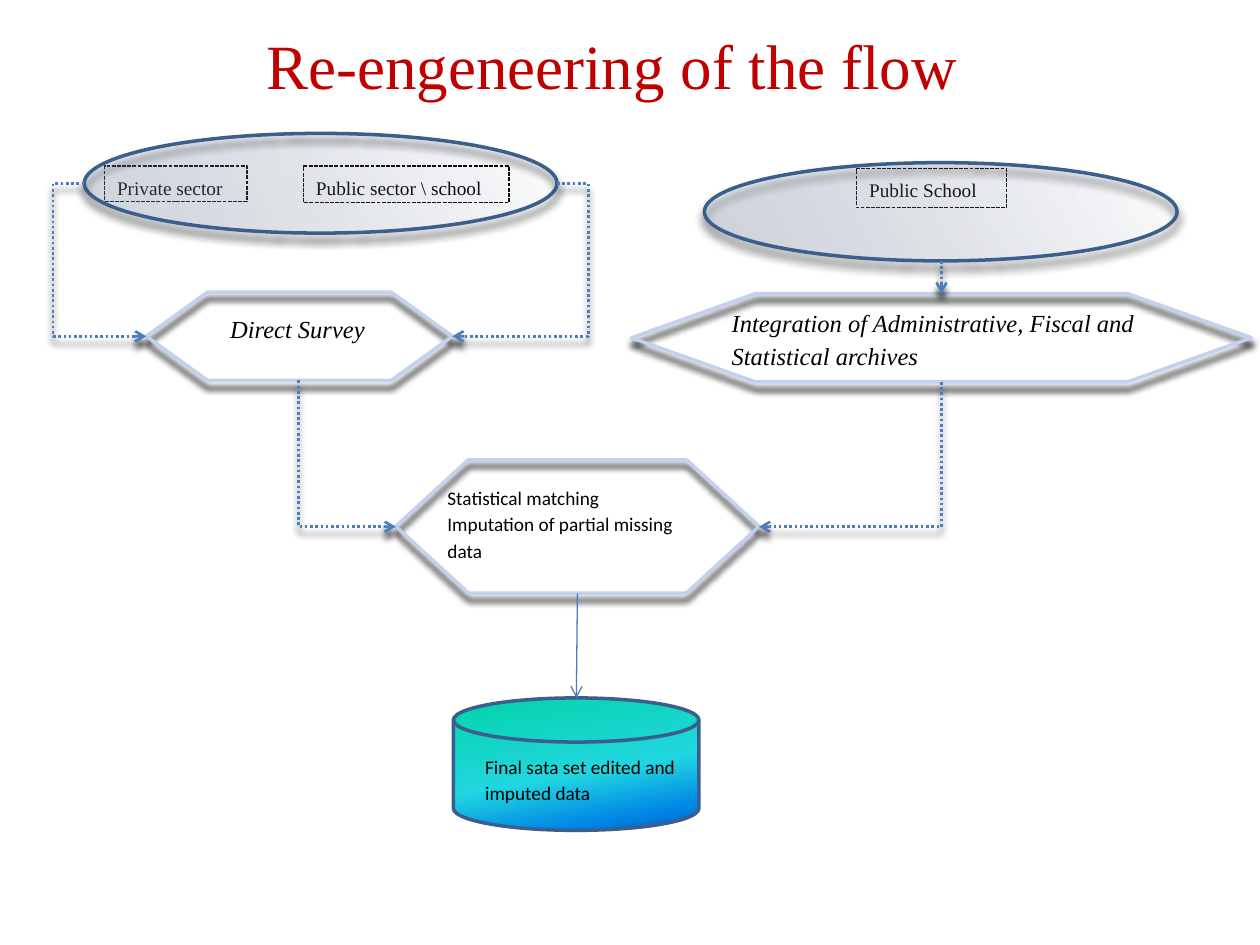
from lxml.etree import SubElement
from pptx import Presentation
from pptx.dml.color import RGBColor
from pptx.enum.dml import MSO_LINE as Dash
from pptx.enum.shapes import MSO_CONNECTOR as Link, MSO_SHAPE as Shape
from pptx.enum.text import MSO_ANCHOR as Anchor, PP_ALIGN as Align
from pptx.oxml.ns import qn
from pptx.util import Cm, Pt

SERIF, SANS = "Times New Roman", "Calibri"
NAVY, PALE, STEEL = "3A5F8C", "C2D1ED", "4B7EBC"
SKY_STOPS = [(0, "9AB5E4", 0), (100, PALE, 25), (100, "E1E8F5", 100)]
SKY_STOPS_SHORT = [(0, "9AB5E4", 0), (93, PALE, 25), (100, "E1E8F5", 100)]
SEA_STOPS = [(0, "03D4A8", 100), (56, "21D6E0", 100), (85, "0087E6", 100), (100, "005CBF", 100)]


def color(code):
    return RGBColor.from_string(code)


def add_color(parent, code, opacity):
    tint = SubElement(parent, qn("a:srgbClr"), val=code)
    SubElement(tint, qn("a:alpha"), val=str(opacity * 1000))


def set_shadow(item, opacity=0, blur=4):
    effects = SubElement(item._element.spPr, qn("a:effectLst"))
    if opacity:
        cast = SubElement(effects, qn("a:outerShdw"), blurRad=str(Pt(blur)), dist=str(Pt(4)),
                          dir="5400000", algn="ctr", rotWithShape="0")
        add_color(cast, "000000", opacity)


def set_line(item, code, width, dash=None):
    item.line.color.rgb = color(code)
    item.line.width = Pt(width)
    if dash:
        item.line.dash_style = dash


def set_gradient(shape, stops, angle):
    shape.fill.gradient()
    shape.fill.gradient_angle = 360 - angle
    stop_list = shape._element.spPr.find(".//" + qn("a:gsLst"))
    for old in list(stop_list):
        stop_list.remove(old)
    for position, code, opacity in stops:
        stop = SubElement(stop_list, qn("a:gs"), pos=str(position * 1000))
        add_color(stop, code, opacity)


def write(box, lines, size, font, code="000000", italic=None, spacing=1.15, after=0,
          align=Align.LEFT, anchor=Anchor.TOP, inset=True):
    frame = box.text_frame
    frame.word_wrap = True
    frame.vertical_anchor = anchor
    if not inset:
        frame.margin_left = frame.margin_right = frame.margin_top = frame.margin_bottom = 0
    frame.text = "\n".join(lines)
    for paragraph in frame.paragraphs:
        paragraph.alignment = align
        paragraph.line_spacing = spacing
        paragraph.space_after = Pt(after)
        paragraph.font.size = Pt(size)
        paragraph.font.name = font
        paragraph.font.italic = italic
        paragraph.font.color.rgb = color(code)


def add_label(slide, place, lines, size, font, **style):
    write(slide.shapes.add_textbox(*map(Cm, place)), lines, size, font, **style)


def add_source(slide, place, name, fill="FFFFFF"):
    source = slide.shapes.add_shape(Shape.RECTANGLE, *map(Cm, place))
    if fill:
        source.fill.solid()
        source.fill.fore_color.rgb = color(fill)
    else:
        source.fill.background()
    set_line(source, "000000", 0.75, Dash.SQUARE_DOT)
    set_shadow(source)
    write(source, [name], 11, SERIF, after=10)


def add_store(slide, kind, place, stops, angle, shadow=(0,)):
    store = slide.shapes.add_shape(kind, *map(Cm, place))
    set_gradient(store, stops, angle)
    set_line(store, NAVY, 2)
    set_shadow(store, *shadow)


def add_step(slide, place):
    step = slide.shapes.add_shape(Shape.FLOWCHART_PREPARATION, *map(Cm, place))
    step.fill.background()
    set_line(step, PALE, 2)
    set_shadow(step, 93)
    return step


def add_arrow(slide, kind, start, end, shadow=0, width=1.5, dash=Dash.ROUND_DOT):
    arrow = slide.shapes.add_connector(kind, *map(Cm, start + end))
    set_line(arrow, STEEL, width, dash)
    SubElement(arrow.line._get_or_add_ln(), qn("a:tailEnd"), type="arrow")
    set_shadow(arrow, shadow)
    return arrow


def add_detour(slide, start, end, turn, shadow):
    arrow = add_arrow(slide, Link.ELBOW, start, end, shadow)
    ratio = (turn - start[0]) / (end[0] - start[0])
    guides = arrow._element.spPr.prstGeom.get_or_add_avLst()
    SubElement(guides, qn("a:gd"), name="adj1", fmla=f"val {round(ratio * 100000)}")


def add_corner(slide, start, end, shadow):
    arrow = add_arrow(slide, Link.ELBOW, start, end, shadow)
    across, down = abs(end[0] - start[0]), end[1] - start[1]
    arrow.left = Cm((start[0] + end[0] - down) / 2)
    arrow.top = Cm((start[1] + end[1] - across) / 2)
    arrow.width, arrow.height = Cm(down), Cm(across)
    rightward = end[0] > start[0]
    geometry = arrow._element.spPr
    geometry.prstGeom.set("prst", "bentConnector2")
    geometry.xfrm.set("rot", str((270 if rightward else 90) * 60000))
    geometry.xfrm.set("flipH", "1" if rightward else "0")


def main():
    deck = Presentation()
    deck.slide_width, deck.slide_height = Cm(25.4), Cm(19.05)
    slide = deck.slides.add_slide(deck.slide_layouts[6])

    add_label(slide, (0.23, 0.53, 24.21, 1.55), ["Re-engeneering of the flow"], 36, SERIF,
              code="C00000", spacing=1, align=Align.CENTER, anchor=Anchor.MIDDLE, inset=False)
    add_source(slide, (6.12, 3.35, 4.14, 0.74), "Public sector \\ school")
    add_source(slide, (2.11, 3.35, 2.87, 0.71), "Private sector", fill=None)
    add_source(slide, (17.27, 3.4, 3.02, 0.79), "Public School")

    add_store(slide, Shape.OVAL, (1.7, 2.69, 9.53, 2.01), SKY_STOPS, 150, (65, 5))
    add_label(slide, (4.39, 6.12, 3.35, 0.97), ["Direct Survey"], 14, SERIF,
              italic=True, after=10)
    add_store(slide, Shape.OVAL, (14.2, 3.28, 9.53, 1.98), SKY_STOPS_SHORT, 150, (65, 5))
    add_label(slide, (14.5, 5.99, 9.68, 1.88),
              ["Integration of Administrative, Fiscal and Statistical archives"], 14, SERIF,
              italic=True, after=10)
    add_store(slide, Shape.FLOWCHART_MAGNETIC_DISK, (9.14, 14.07, 4.95, 2.67), SEA_STOPS, 80)
    add_label(slide, (9.78, 14.99, 4.32, 1.4), ["Final sata set edited and imputed data"],
              11, SANS, anchor=Anchor.MIDDLE, inset=False)

    matching = add_step(slide, (7.98, 9.27, 7.32, 2.69))
    integration = add_step(slide, (12.73, 5.92, 12.5, 1.78))
    add_step(slide, (2.95, 5.89, 6.17, 1.78))

    add_detour(slide, (1.7, 3.7), (2.95, 6.78), 1.07, 78)
    add_detour(slide, (11.23, 3.7), (9.12, 6.78), 11.86, 81)
    add_label(slide, (9.02, 9.73, 5.21, 1.78),
              ["Statistical matching", "Imputation of partial missing data"],
              11, SANS, inset=False)
    add_corner(slide, (18.98, 7.7), (15.3, 10.62), 71)
    add_corner(slide, (6.02, 7.67), (7.98, 10.62), 76)
    to_final = add_arrow(slide, Link.STRAIGHT, (11.64, 11.96), (11.62, 14.07),
                         width=0.75, dash=None)
    to_final.begin_connect(matching, 2)
    to_integration = add_arrow(slide, Link.STRAIGHT, (18.98, 5.26), (18.98, 5.92), 83)
    to_integration.end_connect(integration, 0)

    deck.save("out.pptx")


if __name__ == "__main__":
    main()
